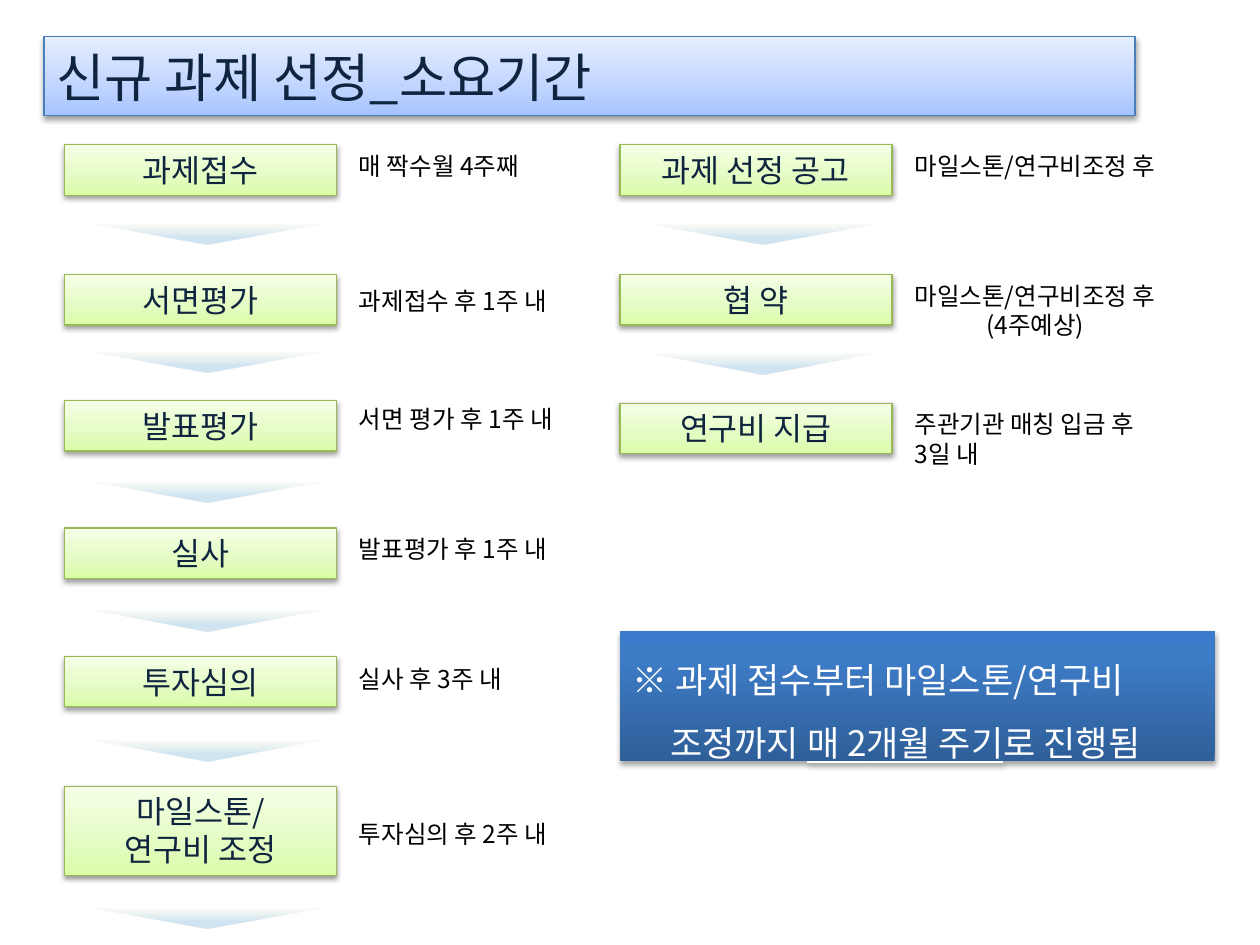
from lxml import etree
from pptx import Presentation
from pptx.dml.color import RGBColor
from pptx.enum import shapes, text
from pptx.oxml import ns
from pptx.util import Inches, Pt

FONT = "Noto Sans CJK KR"
NAVY = RGBColor(0x0F, 0x24, 0x3E)
BLACK = RGBColor(0, 0, 0)
WHITE = RGBColor(255, 255, 255)
GREEN_LINE = RGBColor(0x98, 0xB9, 0x55)
BLUE_LINE = RGBColor(0x4B, 0x7E, 0xBC)

# Gradient stops, from the bottom up: position %, colour, opacity %
GREEN = [(0, RGBColor(0xDA, 0xFD, 0xA7), 100), (35, RGBColor(0xE4, 0xFC, 0xC2), 100),
         (100, RGBColor(0xF5, 0xFF, 0xE7), 100)]
PALE_BLUE = [(0, RGBColor(0xA4, 0xC4, 0xFF), 100), (35, RGBColor(0xBF, 0xD4, 0xFF), 100),
             (100, RGBColor(0xE6, 0xEE, 0xFF), 100)]
DEEP_BLUE = [(0, RGBColor(0x2F, 0x5F, 0x99), 100), (80, RGBColor(0x3D, 0x7C, 0xC7), 100),
             (100, RGBColor(0x3A, 0x7C, 0xCB), 100)]
ARROW = [(38, RGBColor(0x5E, 0xA6, 0xD3), 29), (100, RGBColor(0xD7, 0xE4, 0xBD), 14)]

TITLE = "신규 과제 선정_소요기간"
NOTE = [("※ 과제 접수부터 마일스톤/연구비 조정까지 ", False),
        ("매 2개월 주기", True), ("로 진행됨", False)]

# Step name, top, height, timing lines, timing top, timing width
LEFT_STEPS = [
    ("과제접수", 1.15, 0.4, ["매 짝수월 4주째"], 1.15, 1.63),
    ("서면평가", 2.18, 0.4, ["과제접수 후 1주 내"], 2.22, 1.89),
    ("발표평가", 3.18, 0.4, ["서면 평가 후 1주 내"], 3.16, 1.96),
    ("실사", 4.19, 0.4, ["발표평가 후 1주 내"], 4.19, 1.89),
    ("투자심의", 5.21, 0.4, ["실사 후 3주 내"], 5.22, 1.5),
    ("마일스톤/\n연구비 조정", 6.24, 0.71, ["투자심의 후 2주 내"], 6.45, 1.89),
]
RIGHT_STEPS = [
    ("과제 선정 공고", 1.15, 0.4, ["마일스톤/연구비조정 후"], 1.15, 2.31),
    ("협 약", 2.18, 0.4, ["마일스톤/연구비조정 후", "(4주예상)"], 2.18, 2.31),
    ("연구비 지급", 3.2, 0.4, ["주관기관 매칭 입금 후", "3일 내"], 3.2, 2.17),
]
# Left edge, steps, arrow tops
COLUMNS = [(0.51, LEFT_STEPS, [1.78, 2.8, 3.83, 4.85, 5.88, 7.21]),
           (4.92, RIGHT_STEPS, [1.78, 2.81])]
STEP_WIDTH = 2.16
TIMING_OFFSET = 2.24
ARROW_OFFSET, ARROW_WIDTH, ARROW_HEIGHT = 0.24, 1.79, 0.16


def add_colour(parent, colour, opacity):
    element = etree.SubElement(parent, ns.qn("a:srgbClr"), val=str(colour))
    if opacity < 100:
        etree.SubElement(element, ns.qn("a:alpha"), val=str(opacity * 1000))


def set_gradient(shape, stops):
    shape.fill.gradient()
    shape.fill.gradient_angle = 90  # counter-clockwise: bottom to top
    stop_list = shape._element.spPr.find(".//" + ns.qn("a:gsLst"))
    for old_stop in list(stop_list):
        stop_list.remove(old_stop)
    for position, colour, opacity in stops:
        stop = etree.SubElement(stop_list, ns.qn("a:gs"), pos=str(position * 1000))
        add_colour(stop, colour, opacity)


def add_shadow(shape, opacity, distance):
    effects = shape._element.spPr.find(ns.qn("a:effectLst"))
    shadow = etree.SubElement(effects, ns.qn("a:outerShdw"), blurRad=str(Pt(3.1)),
                              dist=str(Pt(distance)), dir="5400000", rotWithShape="0")
    add_colour(shadow, BLACK, opacity)


def add_gradient_shape(slide, kind, box, stops, line=None):
    shape = slide.shapes.add_shape(kind, *map(Inches, box))
    shape.shadow.inherit = False
    set_gradient(shape, stops)
    if line is None:
        shape.line.fill.background()
    else:
        shape.line.color.rgb = line
        shape.line.width = Pt(0.75)
    return shape


def add_run(paragraph, words, size, colour, underline=None):
    for index, part in enumerate(words.split("\n")):
        if index:
            paragraph.add_line_break()
        run = paragraph.add_run()
        run.text = part
        font = run.font
        font.size, font.name, font.underline = Pt(size), FONT, underline
        font.color.rgb = colour
        etree.SubElement(run._r.get_or_add_rPr(), ns.qn("a:ea"), typeface=FONT)


def first_paragraph(shape, align, anchor=text.MSO_ANCHOR.TOP, grow=True, wrap=True):
    frame = shape.text_frame
    frame.word_wrap = wrap
    frame.vertical_anchor = anchor
    frame.auto_size = (text.MSO_AUTO_SIZE.SHAPE_TO_FIT_TEXT if grow
                       else text.MSO_AUTO_SIZE.NONE)
    frame.paragraphs[0].alignment = align
    return frame.paragraphs[0]


def add_step(slide, left, step):
    name, top, height, timing, timing_top, timing_width = step
    box = add_gradient_shape(slide, shapes.MSO_SHAPE.RECTANGLE,
                             (left, top, STEP_WIDTH, height), GREEN, GREEN_LINE)
    add_shadow(box, 38, 1.6)
    add_run(first_paragraph(box, text.PP_ALIGN.CENTER), name, 18, NAVY)

    label = slide.shapes.add_textbox(Inches(left + TIMING_OFFSET), Inches(timing_top),
                                     Inches(timing_width), Inches(0.11 + 0.23 * len(timing)))
    paragraph = first_paragraph(label, text.PP_ALIGN.LEFT, wrap=False)
    for index, words in enumerate(timing):
        if index:
            paragraph = label.text_frame.add_paragraph()
            if words.startswith("("):
                paragraph.alignment = text.PP_ALIGN.CENTER
        add_run(paragraph, words, 14, BLACK)


def add_arrow(slide, left, top):
    arrow = add_gradient_shape(slide, shapes.MSO_SHAPE.DOWN_ARROW,
                               (left, top, ARROW_WIDTH, ARROW_HEIGHT), ARROW)
    arrow.adjustments[0] = 0.35
    arrow.adjustments[1] = 1


def add_note(slide):
    note = add_gradient_shape(slide, shapes.MSO_SHAPE.RECTANGLE,
                              (4.92, 5.01, 4.72, 1.03), DEEP_BLUE)
    add_shadow(note, 35, 1.8)
    paragraph = first_paragraph(note, text.PP_ALIGN.LEFT)
    paragraph.line_spacing = 1.5
    properties = paragraph._p.get_or_add_pPr()
    properties.set("marL", str(Inches(0.3)))
    properties.set("indent", str(Inches(-0.3)))
    for words, underline in NOTE:
        add_run(paragraph, words, 20, WHITE, underline)


def add_title(slide):
    title = add_gradient_shape(slide, shapes.MSO_SHAPE.RECTANGLE,
                               (0.35, 0.29, 8.66, 0.63), PALE_BLUE, BLUE_LINE)
    add_shadow(title, 38, 1.6)
    paragraph = first_paragraph(title, text.PP_ALIGN.LEFT, text.MSO_ANCHOR.MIDDLE, grow=False)
    add_run(paragraph, TITLE, 30, NAVY)


def main():
    presentation = Presentation()
    presentation.slide_width, presentation.slide_height = Inches(10), Inches(7.5)
    slide = presentation.slides.add_slide(presentation.slide_layouts[6])
    add_title(slide)
    for left, steps, arrow_tops in COLUMNS:
        for step in steps:
            add_step(slide, left, step)
        for top in arrow_tops:
            add_arrow(slide, left + ARROW_OFFSET, top)
    add_note(slide)
    presentation.save("out.pptx")


if __name__ == "__main__":
    main()
